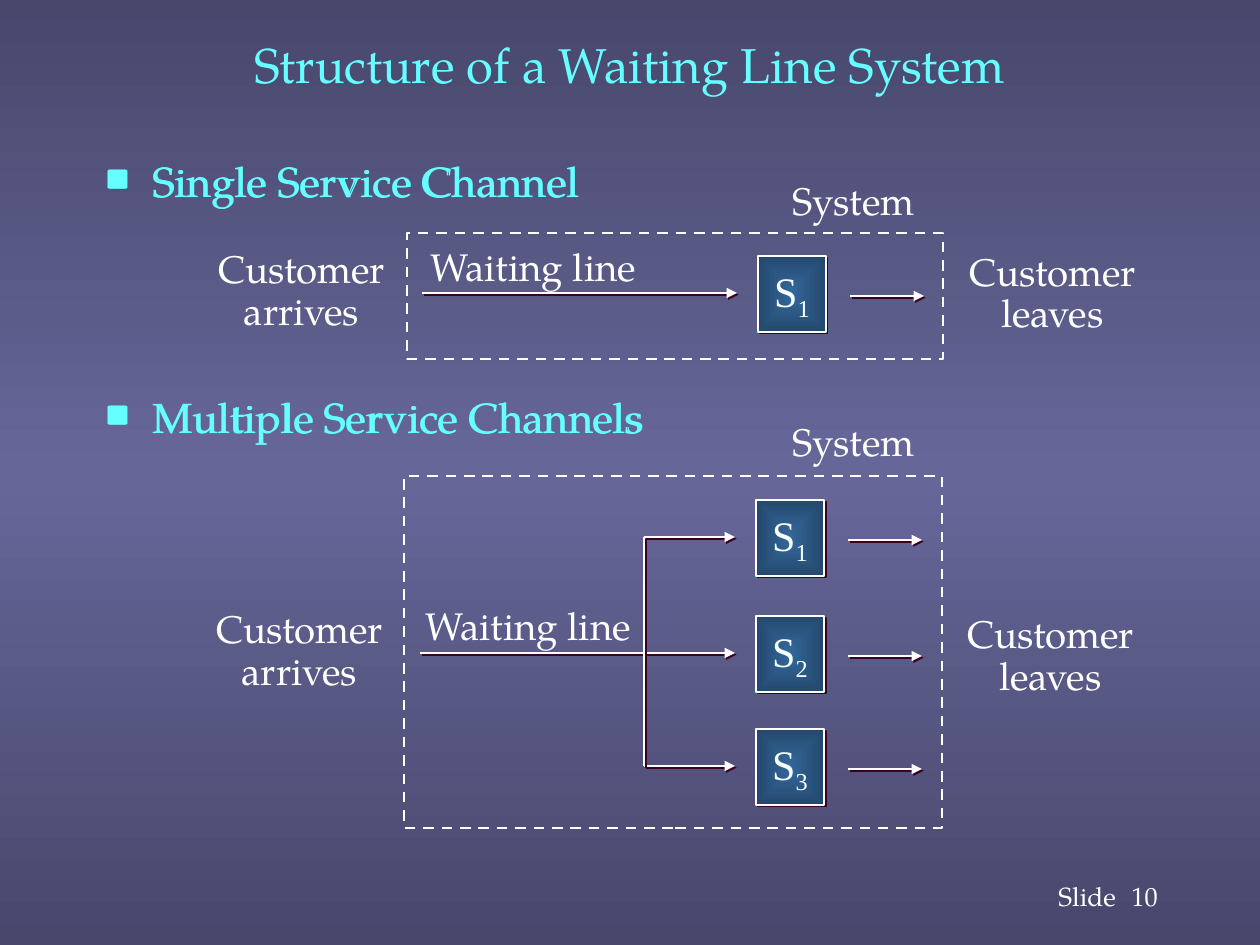
from pptx import Presentation
from pptx.dml.color import RGBColor
from pptx.enum.dml import MSO_LINE
from pptx.enum.shapes import MSO_CONNECTOR, MSO_SHAPE
from pptx.enum.text import MSO_ANCHOR, MSO_AUTO_SIZE, PP_ALIGN
from pptx.oxml import parse_xml
from pptx.oxml.ns import nsdecls, qn
from pptx.util import Pt

PX = 914400 / 126
RECTANGLE = MSO_SHAPE.RECTANGLE
STRAIGHT = MSO_CONNECTOR.STRAIGHT
DASH = MSO_LINE.DASH
MIDDLE, TOP = MSO_ANCHOR.MIDDLE, MSO_ANCHOR.TOP
CENTER, LEFT = PP_ALIGN.CENTER, PP_ALIGN.LEFT
NO_FIT = MSO_AUTO_SIZE.NONE

COLORS = {
    "heading": "66FFFF",
    "text": "FFFFFF",
    "server_text": "F7FFFF",
    "line": "FFFFFF",
    "shadow": "3C0023",
    "background": "666699",
    "server": "336699",
}
SERIF = "TeX Gyre Pagella"
SERVER_FONT = "Times New Roman"
SERVER_WIDTH, SERVER_HEIGHT = 68, 76
HEADINGS = ("Single Service Channel", "Multiple Service Channels")
HEADING_GAPS = (5, 106)


def px(*lengths):
    return [round(length * PX) for length in lengths]


def color(name):
    return RGBColor.from_string(COLORS[name])


def set_format(target, formats):
    for name, value in formats.items():
        setattr(target, name, value)


def add_span(para, text, size, color_name="text", font=SERIF):
    span = para.add_run()
    span.text = text
    set_format(span.font, {"name": font, "size": Pt(size), "bold": False})
    span.font.color.rgb = color(color_name)
    return span


def set_gradient(fill, root, color_name, stops, direction):
    """Fill with one colour; stops pairs each position with whether it is shaded."""
    fill.gradient()
    old = root.find(".//" + qn("a:gradFill"))
    shade = '<a:shade val="46275"/>'
    stop_xml = "".join(
        f'<a:gs pos="{position * 1000}"><a:srgbClr val="{COLORS[color_name]}">'
        f'{shade if shaded else ""}</a:srgbClr></a:gs>'
        for position, shaded in stops
    )
    gradient = parse_xml(
        f'<a:gradFill {nsdecls("a")} rotWithShape="1">'
        f"<a:gsLst>{stop_xml}</a:gsLst>{direction}</a:gradFill>"
    )
    old.getparent().replace(old, gradient)


def add_shadow(shape):
    shape._element.spPr.append(parse_xml(
        f'<a:effectLst {nsdecls("a")}>'
        '<a:outerShdw dist="17780" dir="2700000" algn="ctr" rotWithShape="0">'
        f'<a:srgbClr val="{COLORS["shadow"]}"/></a:outerShdw></a:effectLst>'
    ))


def set_outline(shape, width):
    shape.line.color.rgb = color("line")
    shape.line.width = Pt(width)


def add_line(page, start, end, arrow=True):
    line = page.shapes.add_connector(STRAIGHT, *px(*start, *end))
    set_outline(line, 1)
    if arrow:
        line.line._get_or_add_ln().append(
            parse_xml(f'<a:tailEnd {nsdecls("a")} type="triangle"/>'))
    add_shadow(line)


def add_system(page, left, top, width, height):
    box = page.shapes.add_shape(RECTANGLE, *px(left, top, width, height))
    box.shadow.inherit = False
    box.fill.background()
    set_outline(box, 1.5)
    box.line.dash_style = DASH


def add_server(page, number, left, top, entry_left):
    """Add a server with the arrow that leads to it and the one that leaves it."""
    add_line(page, (entry_left, top + 37), (left - 21, top + 37))
    add_line(page, (left + 92, top + 40), (left + 166, top + 40))
    box = page.shapes.add_shape(
        RECTANGLE, *px(left, top, SERVER_WIDTH, SERVER_HEIGHT))
    set_gradient(
        box.fill, box._element.spPr, "server", ((0, False), (100, True)),
        '<a:path path="shape">'
        '<a:fillToRect l="50000" t="50000" r="50000" b="50000"/></a:path>')
    set_outline(box, 1)
    add_shadow(box)
    set_format(box.text_frame, {"word_wrap": False, "vertical_anchor": MIDDLE})
    para = box.text_frame.paragraphs[0]
    para.alignment = CENTER
    add_span(para, "S", 24, "server_text", SERVER_FONT)
    index = add_span(para, str(number), 24, "server_text", SERVER_FONT)
    index.font._element.set("baseline", "-25000")


def add_label(page, lines, left, top, width, height,
              size=22, alignment=CENTER, anchor=TOP):
    box = page.shapes.add_textbox(*px(left, top, width, height))
    frame = box.text_frame
    set_format(frame, {"word_wrap": False, "vertical_anchor": anchor})
    for position, text in enumerate(lines):
        para = frame.add_paragraph() if position else frame.paragraphs[0]
        set_format(para, {"alignment": alignment, "line_spacing": 0.9})
        add_span(para, text, size)


def add_title(page):
    title = page.shapes.title
    set_format(title, dict(zip(("left", "top", "width", "height"),
                               px(94, 8, 1071, 112))))
    set_format(title.text_frame, {"auto_size": NO_FIT, "vertical_anchor": MIDDLE})
    para = title.text_frame.paragraphs[0]
    para.alignment = CENTER
    add_span(para, "Structure of a Waiting Line System", 28, "heading")


def fill_headings(box, left):
    set_format(box, dict(zip(("left", "top", "width", "height"),
                             px(left, 149, 1071, 306))))
    frame = box.text_frame
    set_format(frame, {"auto_size": NO_FIT, "word_wrap": True})
    for position, (text, gap) in enumerate(zip(HEADINGS, HEADING_GAPS)):
        para = frame.add_paragraph() if position else frame.paragraphs[0]
        set_format(para, {"alignment": LEFT, "space_before": Pt(gap)})
        properties = para._p.get_or_add_pPr()
        properties.set("marL", "342900")
        properties.set("indent", "-342900")
        for bullet in (
            f'<a:buClr {nsdecls("a")}><a:srgbClr val="{COLORS["heading"]}"/></a:buClr>',
            f'<a:buSzPct {nsdecls("a")} val="75000"/>',
            f'<a:buFont {nsdecls("a")} typeface="{SERIF}"/>',
            f'<a:buChar {nsdecls("a")} char="■"/>',
        ):
            properties.append(parse_xml(bullet))
        add_span(para, text, 24, "heading")


def add_headings(page):
    """Set the list twice, one pixel apart, which thickens its letters."""
    fill_headings(page.placeholders[1], 94)
    fill_headings(page.shapes.add_textbox(0, 0, 0, 0), 93)


def add_single_channel(page):
    add_system(page, 407, 233, 536, 126)
    add_server(page, 1, 758, 256, 422)


def add_multiple_channels(page):
    add_system(page, 404, 476, 538, 352)
    for number, (top, entry_left) in enumerate(
            ((500, 644), (616, 420), (729, 644)), start=1):
        add_server(page, number, 756, top, entry_left)
    add_line(page, (644, 537), (644, 766), arrow=False)


def add_labels(page):
    for lines, left, top, width, height in (
        (("Customer", "leaves"), 954, 609, 193, 96),
        (("Customer", "leaves"), 956, 247, 193, 96),
        (("Customer", "arrives"), 203, 604, 193, 96),
        (("Customer", "arrives"), 205, 244, 193, 96),
        (("Waiting line",), 416, 242, 234, 54),
        (("Waiting line",), 411, 601, 234, 54),
        (("System",), 779, 176, 149, 54),
        (("System",), 779, 417, 149, 54),
    ):
        add_label(page, lines, left, top, width, height)
    for text, left, width in (("Slide", 1046, 84), ("10", 1119, 54)):
        add_label(page, (text,), left, 877, width, 42, 15, LEFT, MIDDLE)


def main():
    deck = Presentation()
    deck.slide_width, deck.slide_height = px(1260, 945)
    page = deck.slides.add_slide(deck.slide_layouts[1])
    set_gradient(page.background.fill, page.element, "background",
                 ((0, True), (50, False), (100, True)),
                 '<a:lin ang="5400000" scaled="0"/>')
    add_title(page)
    add_headings(page)
    add_single_channel(page)
    add_multiple_channels(page)
    add_labels(page)
    deck.save("out.pptx")


if __name__ == "__main__":
    main()
